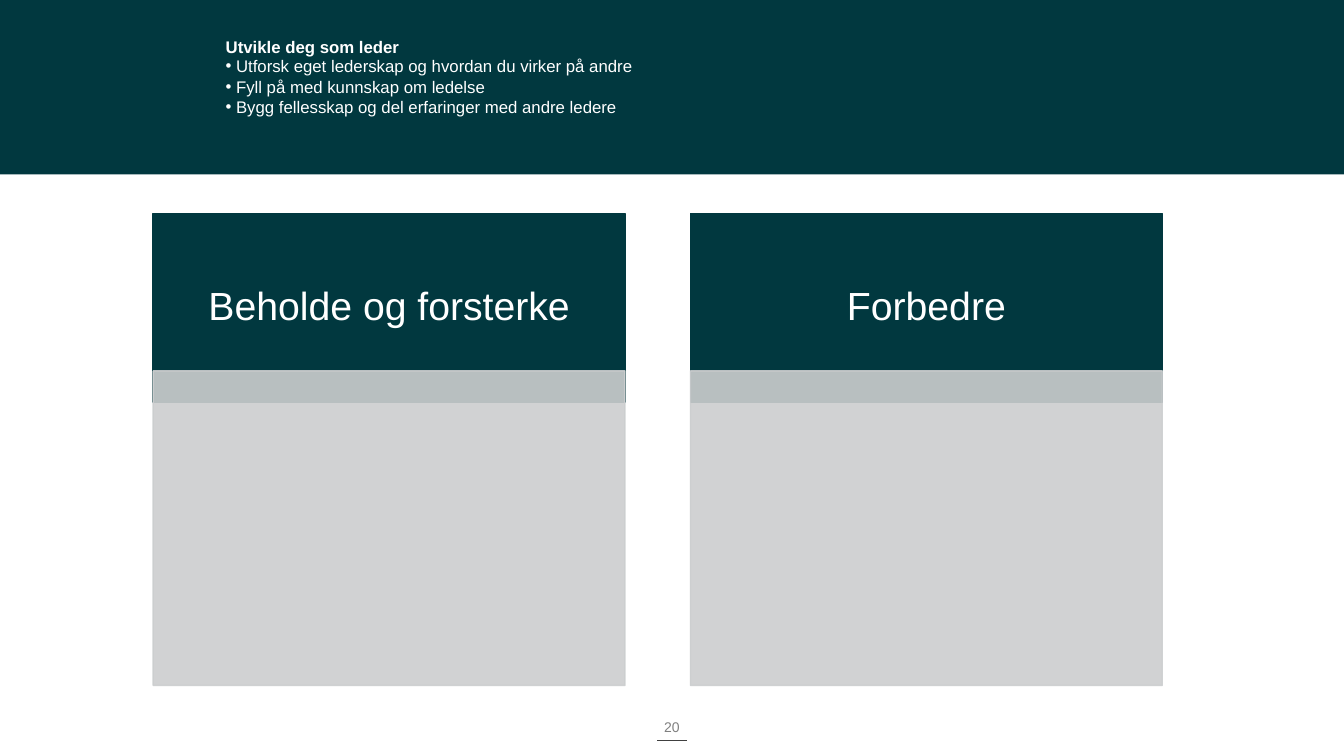
from dataclasses import dataclass

from lxml import etree
from pptx import Presentation
from pptx.dml.color import RGBColor
from pptx.enum.shapes import MSO_CONNECTOR, MSO_SHAPE
from pptx.enum.text import MSO_ANCHOR, MSO_AUTO_SIZE, PP_ALIGN
from pptx.oxml.ns import qn
from pptx.util import Pt

RECTANGLE = MSO_SHAPE.RECTANGLE
STRAIGHT = MSO_CONNECTOR.STRAIGHT
TOP, MIDDLE = MSO_ANCHOR.TOP, MSO_ANCHOR.MIDDLE
LEFT, CENTER = PP_ALIGN.LEFT, PP_ALIGN.CENTER
NO_FIT = MSO_AUTO_SIZE.NONE


@dataclass(frozen=True)
class Theme:
    font: str = "Arial"
    teal: str = "01383F"
    grey: str = "CCCECF"
    white: str = "FFFFFF"
    number: str = "808080"
    rule: str = "404040"
    body_size: float = 12
    panel_size: float = 28
    number_size: float = 10
    panel_opacity: int = 90


THEME = Theme()
TITLE = "Utvikle deg som leder"
GOALS = [
    "Utforsk eget lederskap og hvordan du virker på andre",
    "Fyll på med kunnskap om ledelse",
    "Bygg fellesskap og del erfaringer med andre ledere",
]
PANELS = ["Beholde og forsterke", "Forbedre"]


def set_opacity(color_format, percent):
    color = color_format.find(".//" + qn("a:srgbClr"))
    etree.SubElement(color, qn("a:alpha"), val=str(percent * 1000))


def add_rectangle(shapes, box, color, outlined=False, opacity=100):
    shape = shapes.add_shape(RECTANGLE, *map(Pt, box))
    shape.shadow.inherit = False
    shape.fill.solid()
    shape.fill.fore_color.rgb = RGBColor.from_string(color)
    if outlined:
        shape.line.color.rgb = RGBColor.from_string(color)
        shape.line.width = Pt(1)
    else:
        shape.line.fill.background()
    if opacity < 100:
        properties = shape.element.spPr
        set_opacity(properties.find(qn("a:solidFill")), opacity)
        set_opacity(properties.find(qn("a:ln")), opacity)
    return shape


def format_frame(shape, anchor, inset_x=7.2, inset_y=3.6):
    settings = {
        "word_wrap": True, "auto_size": NO_FIT, "vertical_anchor": anchor,
        "margin_left": Pt(inset_x), "margin_right": Pt(inset_x),
        "margin_top": Pt(inset_y), "margin_bottom": Pt(inset_y),
    }
    for name, value in settings.items():
        setattr(shape.text_frame, name, value)
    return shape.text_frame


def write(para, text, size, color, align=LEFT, bold=False):
    para.alignment = align
    span = para.add_run()
    span.text = text
    settings = {"name": THEME.font, "size": Pt(size), "bold": bold}
    for name, value in settings.items():
        setattr(span.font, name, value)
    span.font.color.rgb = RGBColor.from_string(color)


def add_bullet(para, indent):
    properties = para._p.get_or_add_pPr()
    properties.set("marL", str(Pt(indent)))
    properties.set("indent", str(-Pt(indent)))
    etree.SubElement(properties, qn("a:buFont"), typeface=THEME.font)
    etree.SubElement(properties, qn("a:buChar"), char="•")


def add_banner(page, box):
    left, top, width, height = box
    banner = add_rectangle(page.shapes, box, THEME.teal)

    # Heading, brought in front of the banner
    title = page.shapes.title
    banner.element.addnext(title.element)
    text_left, text_width = left + 164, 480
    title.left, title.top = Pt(text_left), Pt(top + 28.8)
    title.width, title.height = Pt(text_width), Pt(21)
    para = format_frame(title, TOP).paragraphs[0]
    para.line_spacing = 1.0
    write(para, TITLE, THEME.body_size, THEME.white, bold=True)

    # Goals
    goals = page.shapes.add_textbox(
        Pt(text_left), Pt(top + 43), Pt(text_width), Pt(51))
    frame = format_frame(goals, TOP)
    for index, goal in enumerate(GOALS):
        para = frame.add_paragraph() if index else frame.paragraphs[0]
        para.line_spacing = Pt(14.4)
        add_bullet(para, 7.5)
        write(para, goal, THEME.body_size, THEME.white)


def add_panel(page, box, label):
    left, top, width, height = box
    header_height, body_offset = 134.6, 112.3
    group = page.shapes.add_group_shape()
    header = add_rectangle(
        group.shapes, (left, top, width, header_height), THEME.teal, outlined=True)
    para = format_frame(header, MIDDLE, 16, 8.6).paragraphs[0]
    para.line_spacing = 0.9
    write(para, label, THEME.panel_size, THEME.white, CENTER)
    # The translucent body overlaps the foot of the header
    add_rectangle(
        group.shapes, (left, top + body_offset, width, height - body_offset),
        THEME.grey, outlined=True, opacity=THEME.panel_opacity)


def add_page_number(page, box, number):
    left, top, width, height = box
    middle, rule_top, rule_half = left + width / 2, top + 23.8, 10.4
    rule = page.shapes.add_connector(
        STRAIGHT, Pt(middle - rule_half), Pt(rule_top),
        Pt(middle + rule_half), Pt(rule_top))
    rule.line.color.rgb = RGBColor.from_string(THEME.rule)
    rule.line.width = Pt(0.5)
    etree.SubElement(rule.element.spPr, qn("a:effectLst"))
    label = page.shapes.add_textbox(*map(Pt, box))
    para = format_frame(label, MIDDLE).paragraphs[0]
    write(para, number, THEME.number_size, THEME.number, CENTER)


def main():
    deck = Presentation()
    deck.slide_width, deck.slide_height = Pt(960), Pt(540)
    title_only = deck.slide_layouts[5]
    page = deck.slides.add_slide(title_only)

    add_banner(page, (-10, -6.5, 970, 131))
    panel_left, panel_width, panel_gap = 109.4, 337, 46.8
    for index, label in enumerate(PANELS):
        left = panel_left + index * (panel_width + panel_gap)
        add_panel(page, (left, 152.6, panel_width, 337), label)
    add_page_number(page, (368, 504.7, 224, 28.8), "20")
    deck.save("out.pptx")


if __name__ == "__main__":
    main()
